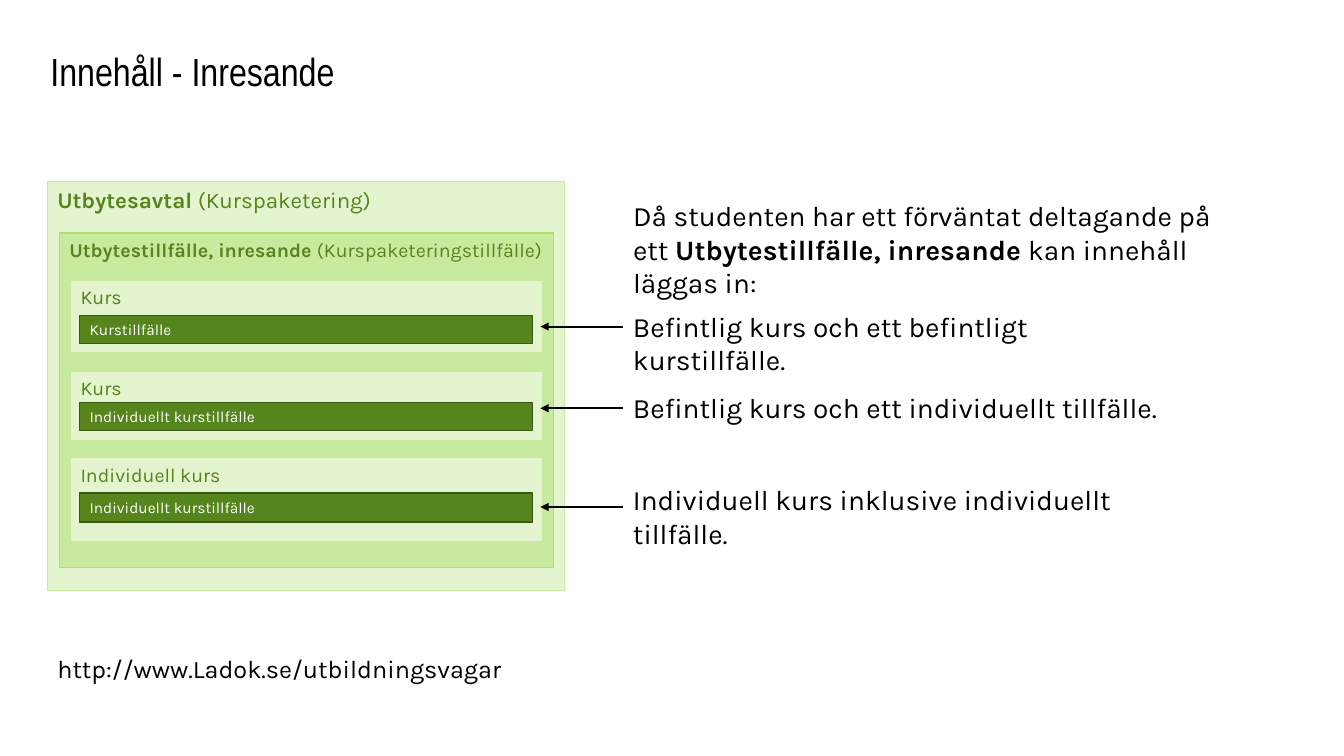
from dataclasses import dataclass

import lxml.etree
import pptx
import pptx.dml.color
import pptx.enum.shapes
import pptx.enum.text
import pptx.oxml.ns
import pptx.util
from pptx.util import Inches

COLOURS = {
    "pale": "E4F4CE",
    "light": "C8EA9E",
    "lime": "ADDF6D",
    "green": "56841D",
    "dark": "395813",
    "white": "FFFFFF",
    "black": "000000",
}
BODY_FONT = "Karla"
TITLE_FONT = "Arial Narrow"


@dataclass
class Span:
    text: str
    bold: bool = False


@dataclass
class Panel:
    left: float
    top: float
    width: float
    height: float
    spans: list[Span]
    size: int
    fill: str = "pale"
    line: str = "light"
    colour: str = "green"


@dataclass
class Course:
    top: float
    height: float
    name: str
    bar_top: float
    bar_height: float
    occasion: str


@dataclass
class Note:
    left: float
    top: float
    width: float
    height: float
    spans: list[Span]
    size: int = 20


AGREEMENT_PANELS = [
    Panel(0.47, 1.8, 5.13, 4.06,
          [Span("Utbytesavtal ", True), Span("(Kurspaketering)")], 16),
    Panel(0.59, 2.31, 4.9, 3.32,
          [Span("Utbytestillfälle, inresande ", True), Span("(Kurspaketeringstillfälle)")],
          14, "light", "lime"),
]
COURSES = [
    Course(2.78, 0.72, "Kurs", 3.13, 0.28, "Kurstillfälle"),
    Course(3.68, 0.69, "Kurs", 3.99, 0.28, "Individuellt kurstillfälle"),
    Course(4.54, 0.83, "Individuell kurs", 4.89, 0.29, "Individuellt kurstillfälle"),
]
NOTES = [
    Note(6.18, 1.92, 6.18, 0.77, [
        Span("Då studenten har ett förväntat deltagande på ett "),
        Span("Utbytestillfälle, inresande", True),
        Span(" kan innehåll läggas in:"),
    ]),
    Note(6.18, 3.02, 5.6, 0.44, [Span("Befintlig kurs och ett befintligt kurstillfälle.")]),
    Note(6.18, 3.83, 5.6, 0.44, [Span("Befintlig kurs och ett individuellt tillfälle.")]),
    Note(6.18, 4.74, 5.6, 0.44, [Span("Individuell kurs inklusive individuellt tillfälle.")]),
    Note(0.47, 6.43, 5.95, 0.4, [Span("http://www.Ladok.se/utbildningsvagar")], 18),
]
ARROW_HEIGHTS = [3.24, 4.05, 5.03]


def rgb(name: str) -> pptx.dml.color.RGBColor:
    return pptx.dml.color.RGBColor.from_string(COLOURS[name])


def write(box, spans: list[Span], size: int, colour: str, font: str = BODY_FONT) -> None:
    frame = box.text_frame
    frame.word_wrap = True
    para = frame.paragraphs[0]
    para.alignment = pptx.enum.text.PP_ALIGN.LEFT
    for span in spans:
        run = para.add_run()
        run.text = span.text
        if len(spans) > 1:
            run.font.bold = span.bold
    para.font.name = font
    para.font.size = pptx.util.Pt(size)
    para.font.color.rgb = rgb(colour)


def add_title(page, text: str) -> None:
    title = page.shapes.title
    title.left, title.top = Inches(0.4), Inches(0.4)
    title.width, title.height = Inches(10.97), Inches(0.6)
    title.text_frame.vertical_anchor = pptx.enum.text.MSO_ANCHOR.MIDDLE
    write(title, [Span(text)], 28, "black", TITLE_FONT)


def add_panel(page, panel: Panel) -> None:
    box = page.shapes.add_shape(
        pptx.enum.shapes.MSO_SHAPE.RECTANGLE,
        Inches(panel.left), Inches(panel.top), Inches(panel.width), Inches(panel.height))
    box.shadow.inherit = False
    box.fill.solid()
    box.fill.fore_color.rgb = rgb(panel.fill)
    box.line.color.rgb = rgb(panel.line)
    box.line.width = pptx.util.Pt(1)
    box.text_frame.vertical_anchor = pptx.enum.text.MSO_ANCHOR.TOP
    box.text_frame.margin_right = 0
    write(box, panel.spans, panel.size, panel.colour)


def add_course(page, course: Course) -> None:
    add_panel(page, Panel(0.7, course.top, 4.68, course.height, [Span(course.name)], 14))
    add_panel(page, Panel(0.79, course.bar_top, 4.49, course.bar_height,
                          [Span(course.occasion)], 11, "green", "dark", "white"))


def add_note(page, note: Note) -> None:
    box = page.shapes.add_textbox(
        Inches(note.left), Inches(note.top), Inches(note.width), Inches(note.height))
    write(box, note.spans, note.size, "black")


def add_arrow(page, height: float) -> None:
    arrow = page.shapes.add_connector(
        pptx.enum.shapes.MSO_CONNECTOR.STRAIGHT,
        Inches(6.18), Inches(height), Inches(5.36), Inches(height))
    arrow.line.color.rgb = rgb("black")
    arrow.line.width = pptx.util.Pt(1.5)
    qn = pptx.oxml.ns.qn
    properties = arrow._element.spPr
    lxml.etree.SubElement(properties.find(qn("a:ln")), qn("a:tailEnd"), type="triangle")
    lxml.etree.SubElement(properties, qn("a:effectLst"))


def main() -> None:
    deck = pptx.Presentation()
    deck.slide_width, deck.slide_height = Inches(13.33), Inches(7.5)
    page = deck.slides.add_slide(deck.slide_layouts[5])
    add_title(page, "Innehåll - Inresande")
    for panel in AGREEMENT_PANELS:
        add_panel(page, panel)
    for course in COURSES:
        add_course(page, course)
    for note in NOTES:
        add_note(page, note)
    for height in ARROW_HEIGHTS:
        add_arrow(page, height)
    deck.save("out.pptx")


if __name__ == "__main__":
    main()
